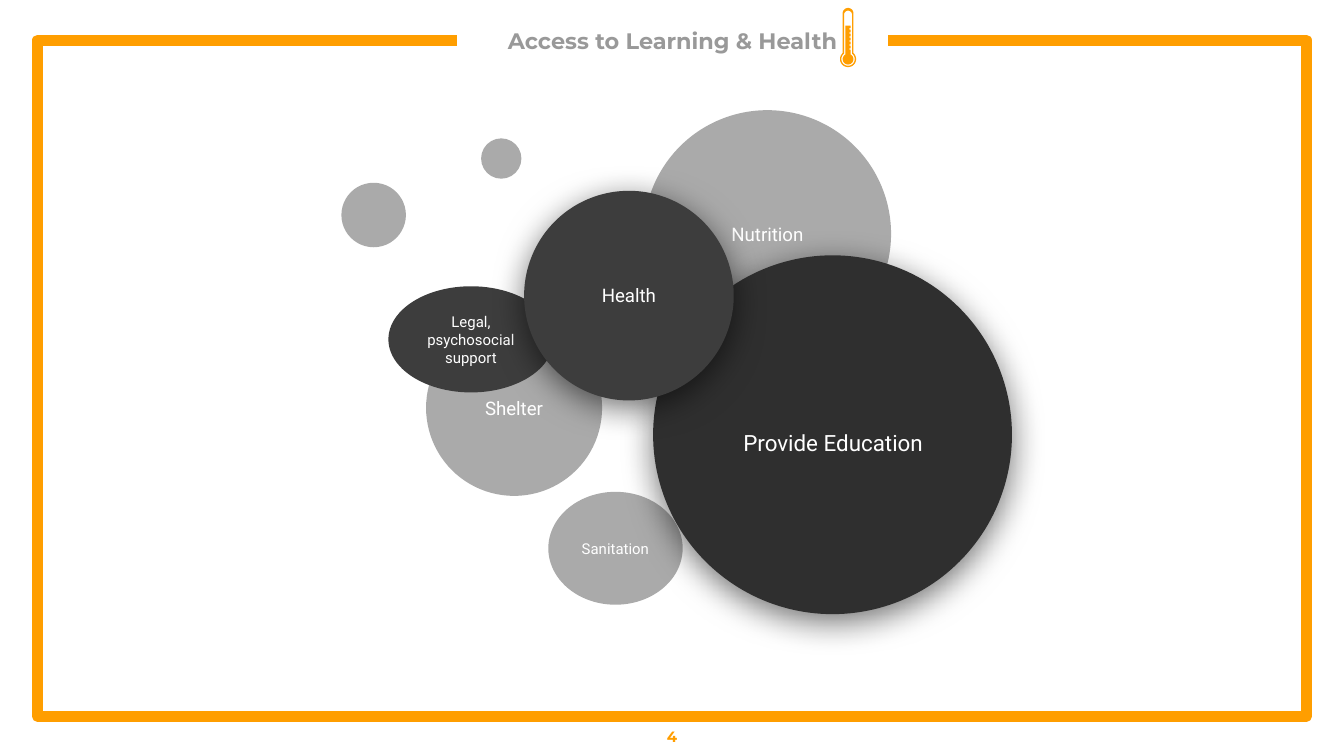
from math import asin, cos, pi, sin

from lxml.etree import SubElement
from pptx import Presentation
from pptx.dml.color import RGBColor
from pptx.enum.shapes import MSO_SHAPE as Shape
from pptx.enum.text import MSO_ANCHOR as Anchor, PP_ALIGN as Align
from pptx.oxml.ns import qn
from pptx.util import Inches, Pt

ORANGE, WHITE, TITLE_GRAY = "FF9E00", "FFFFFF", "999999"
LIGHT, DARK, DARKEST = "AAAAAA", "3D3D3D", "2F2F2F"

TITLE = "Access to Learning & Health"
PAGE_NUMBER = "4"
FRAME = [(3.4, 0.3), (0.28, 0.3), (0.28, 5.33), (9.72, 5.33), (9.72, 0.3), (6.61, 0.3)]

# (left, top, width, height), fill, text, text size
BUBBLES = [
    ((4.08, 3.66, 1, 0.84), LIGHT, "Sanitation", 8),
    ((2.54, 1.36, 0.48, 0.48), LIGHT, "", 8),
    ((3.17, 2.38, 1.31, 1.31), LIGHT, "Shelter", 10),
    ((4.79, 0.82, 1.84, 1.84), LIGHT, "Nutrition", 10),
    ((2.89, 2.13, 1.23, 0.79), DARK, "Legal, psychosocial support", 8),
    ((3.58, 1.03, 0.3, 0.3), LIGHT, "", 8),
]
# circle, fill, label box, text, text size
RAISED_BUBBLES = [
    ((4.86, 1.9, 2.67, 2.67), DARKEST, (5.18, 2.66, 2.04, 1.27), "Provide Education", 12),
    ((3.9, 1.42, 1.56, 1.56), DARK, (4.15, 1.68, 1.06, 1.03), "Health", 10),
]

BULB_X, BULB_Y = 6.31, 0.44
NOTCH_TOPS = [0.21 + 0.03 * step for step in range(6)]
NOTCH_HEIGHT, NOTCH_DEPTH = 0.01, 0.01

deck = Presentation()
deck.slide_width = Inches(10)
deck.slide_height = Inches(10 * 9 / 16)
page = deck.slides.add_slide(deck.slide_layouts[6])


def color(hex_string):
    return RGBColor.from_string(hex_string)


def write(shape, text, size, font, hex_string, bold=False, anchor=Anchor.MIDDLE):
    frame = shape.text_frame
    frame.word_wrap = True
    frame.vertical_anchor = anchor
    frame.margin_left = frame.margin_right = Inches(0.1)
    frame.margin_top = frame.margin_bottom = Inches(0.1)
    frame.text = text
    para = frame.paragraphs[0]
    para.alignment = Align.CENTER
    for span in para.runs:
        span.font.size, span.font.name, span.font.bold = Pt(size), font, bold
        span.font.color.rgb = color(hex_string)


def add_label(place, *style, **options):
    box = page.shapes.add_textbox(*map(Inches, place))
    write(box, *style, **options)


def add_bubble(place, fill):
    bubble = page.shapes.add_shape(Shape.OVAL, *map(Inches, place))
    bubble.shadow.inherit = False
    bubble.fill.solid()
    bubble.fill.fore_color.rgb = color(fill)
    bubble.line.fill.background()
    return bubble


def add_soft_shadow(shape):
    effects = shape._element.spPr.find(qn("a:effectLst"))
    shadow = SubElement(effects, qn("a:outerShdw"), blurRad=str(Pt(18)),
                        dist=str(Pt(4)), dir=str(90 * 60000), algn="bl", rotWithShape="0")
    black = SubElement(shadow, qn("a:srgbClr"), val="000000")
    SubElement(black, qn("a:alpha"), val="55000")


def add_freeform(contours, close=True):
    first, *others = [[(Inches(x), Inches(y)) for x, y in contour] for contour in contours]
    builder = page.shapes.build_freeform(*first[0])
    builder.add_line_segments(first[1:], close=close)
    for contour in others:
        builder.move_to(*contour[0])
        builder.add_line_segments(contour[1:], close=close)
    shape = builder.convert_to_shape()
    shape.shadow.inherit = False
    return shape


def arc(x, y, radius, start, end, steps=24):
    angles = [start + (end - start) * step / steps for step in range(steps + 1)]
    return [(x + radius * cos(angle), y + radius * sin(angle)) for angle in angles]


def bulb(radius, half_tube):
    """Arc around the bulb, from the right side of the tube to the left."""
    gap = asin(half_tube / radius)
    return arc(BULB_X, BULB_Y, radius, gap - pi / 2, 3 * pi / 2 - gap)


def tube_outline(radius, half_tube, top):
    return bulb(radius, half_tube) + arc(BULB_X, top + half_tube, half_tube, pi, 2 * pi)


def fluid_outline(radius, half_tube, top):
    left, right = BULB_X - half_tube, BULB_X + half_tube
    points = bulb(radius, half_tube) + [(left, top), (right, top)]
    for notch in NOTCH_TOPS:
        low = notch + NOTCH_HEIGHT
        points += [(right, notch), (right - NOTCH_DEPTH, notch),
                   (right - NOTCH_DEPTH, low), (right, low)]
    return points


frame_line = add_freeform([FRAME], close=False)
frame_line.fill.background()
frame_line.line.color.rgb = color(ORANGE)
frame_line.line.width = Pt(6)

add_label((3.55, 0.1, 2.91, 0.8), TITLE, 12, "Montserrat", TITLE_GRAY, bold=True, anchor=Anchor.TOP)
add_label((0, 5.33, 10, 0.3), PAGE_NUMBER, 8, "Montserrat", ORANGE, bold=True)

glass = [tube_outline(0.06, 0.04, 0.06), tube_outline(0.05, 0.03, 0.08)]
fluid = [fluid_outline(0.04, 0.02, 0.19)]
for contours in (glass, fluid):
    part = add_freeform(contours)
    part.fill.solid()
    part.fill.fore_color.rgb = color(ORANGE)
    part.line.fill.background()

for place, fill, text, size in BUBBLES:
    bubble = add_bubble(place, fill)
    if text:
        write(bubble, text, size, "Roboto", WHITE)

for place, fill, label_place, text, size in RAISED_BUBBLES:
    add_soft_shadow(add_bubble(place, fill))
    add_label(label_place, text, size, "Roboto", WHITE)

deck.save("out.pptx")
